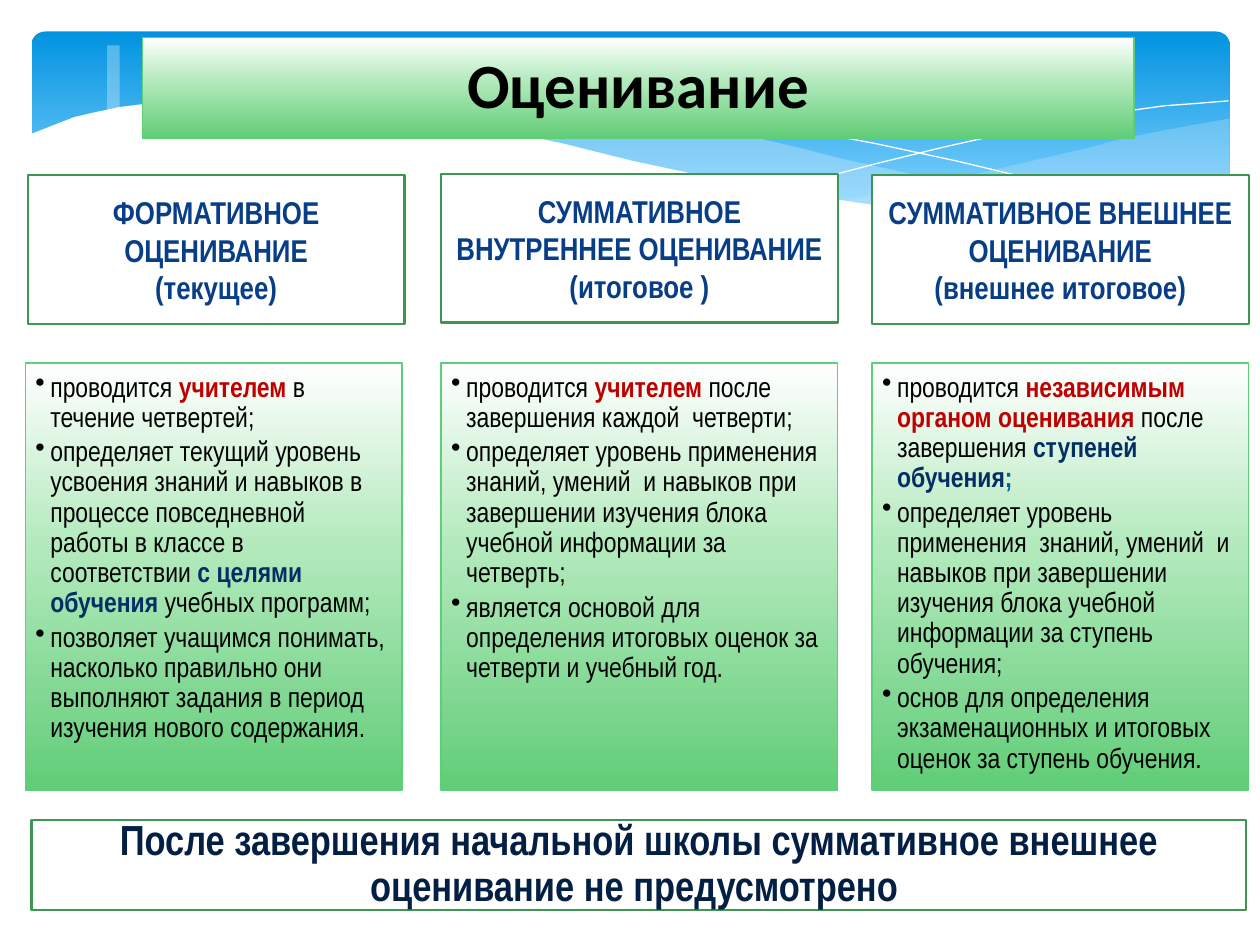
"""Build the assessment types slide."""
from lxml import etree
from pptx import Presentation
from pptx import util as u
from pptx.dml.color import RGBColor
from pptx.enum import shapes, text
from pptx.oxml.ns import qn

BLACK, RED, NAVY, TEAL = "000000", "C00000", "052E65", "016296"
GREEN, DARK_GREEN, WHITE = "5BD078", "3D9653", "FFFFFF"
GREEN_FADE = [(0, WHITE), (44, "B1E9BB"), (100, "61CD78")]
BLUE_FADE = [(0, "0293E0"), (90, "83D3FE")]
NARROW = "Arial Narrow"

TITLE = "Оценивание"
FOOTER = "После завершения начальной школы суммативное внешнее оценивание не предусмотрено "
COLUMNS = [
    {"head": ["ФОРМАТИВНОЕ ОЦЕНИВАНИЕ", "(текущее)"],
     "head_at": (0.22, 1.39), "left": 0.2, "width": 2.99,
     "points": [
         [("проводится ", BLACK), ("учителем ", RED), ("в течение четвертей;", BLACK)],
         [("определяет текущий уровень усвоения знаний и навыков в процессе "
           "повседневной работы в классе в соответствии ", BLACK),
          ("с целями обучения ", NAVY), ("учебных программ;", BLACK)],
         [("позволяет учащимся понимать, насколько правильно они выполняют "
           "задания в период изучения нового содержания.", BLACK)]]},
    {"head": ["СУММАТИВНОЕ ВНУТРЕННЕЕ ОЦЕНИВАНИЕ", "(итоговое )"],
     "head_at": (3.5, 1.38), "left": 3.5, "width": 3.15,
     "points": [
         [("проводится ", BLACK), ("учителем", RED),
          (" после завершения каждой  четверти;", BLACK)],
         [("определяет уровень применения  знаний, умений  и навыков при завершении "
           "изучения блока учебной информации за четверть;", BLACK)],
         [("является основой для определения итоговых оценок за четверти "
           "и учебный год.", BLACK)]]},
    {"head": ["СУММАТИВНОЕ ВНЕШНЕЕ ОЦЕНИВАНИЕ", "(внешнее итоговое)"],
     "head_at": (6.92, 1.39), "left": 6.92, "width": 2.99,
     "points": [
         [("проводится ", BLACK), ("независимым органом оценивания ", RED),
          ("после завершения ", BLACK), ("ступеней обучения", NAVY), (";", TEAL)],
         [("определяет уровень применения  знаний, умений  и навыков при завершении "
           "изучения блока учебной информации за ступень обучения;", BLACK)],
         [("основ для определения экзаменационных и итоговых оценок "
           "за ступень обучения.", BLACK)]]},
]

RIGHT_WAVE = [
    (9.76, 0.94), (9.48, 0.99), (9.21, 1.04), (8.91, 1.1), (8.61, 1.18), (8.05, 1.31),
    (7.53, 1.43), (7.06, 1.52), (6.61, 1.6), (6.91, 1.64), (7.19, 1.67), (7.45, 1.69),
    (7.69, 1.71), (7.92, 1.72), (8.24, 1.72), (8.54, 1.7), (8.81, 1.67), (9.05, 1.63),
    (9.28, 1.58), (9.49, 1.52), (9.63, 1.47), (9.76, 1.41)]
LEFT_WAVE = [
    (8.93, 1.67), (8.66, 1.64), (8.07, 1.54), (7.41, 1.42), (6.68, 1.26), (6.29, 1.16),
    (5.98, 1.09), (5.69, 1.02), (5.41, 0.97), (5.14, 0.92), (4.89, 0.89), (4.42, 0.83),
    (3.99, 0.8), (3.61, 0.8), (3.28, 0.81), (2.86, 0.86), (3.23, 0.9), (3.62, 0.97),
    (4.04, 1.06), (4.49, 1.16), (5.3, 1.35), (5.84, 1.46), (6.18, 1.53), (6.5, 1.58),
    (6.8, 1.63), (7.09, 1.66), (7.36, 1.69), (7.61, 1.71), (7.96, 1.73), (8.28, 1.73),
    (8.57, 1.71), (8.76, 1.69)]
FALLING_LINE = [
    (3.09, 0.9), (3.28, 0.86), (3.53, 0.84), (3.87, 0.82), (4.16, 0.81), (4.5, 0.82),
    (4.89, 0.84), (5.33, 0.88), (5.82, 0.94), (6.36, 1.03), (6.95, 1.14), (7.6, 1.28),
    (8.31, 1.45), (9.07, 1.66)]
RISING_LINE = [
    (6.13, 1.51), (6.53, 1.41), (6.95, 1.3), (7.48, 1.17), (8.06, 1.04), (8.66, 0.93),
    (8.95, 0.88), (9.24, 0.84), (9.51, 0.82), (9.75, 0.8)]
WHITE_WAVE = [
    (9.77, 1.41), (9.59, 1.48), (9.4, 1.54), (9.2, 1.59), (8.99, 1.64), (8.75, 1.67),
    (8.5, 1.7), (8.23, 1.71), (7.93, 1.71), (7.61, 1.7), (7.26, 1.67), (6.88, 1.62),
    (6.48, 1.56), (6.03, 1.49), (5.55, 1.39), (5.03, 1.28), (4.47, 1.14), (3.91, 1.02),
    (3.4, 0.92), (2.92, 0.85), (2.5, 0.81), (2.11, 0.78), (1.77, 0.78), (1.46, 0.79),
    (1.19, 0.82), (0.95, 0.85), (0.76, 0.89), (0.59, 0.93), (0.46, 0.98), (0.36, 1.02),
    (0.23, 1.07), (0.23, 2.24), (9.77, 2.24)]


def color(value):
    return RGBColor.from_string(value)


def paint(shape, fill=None, line=None, weight=0, opacity=100):
    """Set fill (hex, list of stops or None) and outline."""
    shape.shadow.inherit = False
    if fill is None:
        shape.fill.background()
    elif isinstance(fill, list):
        shape.fill.gradient()
        shape.fill.gradient_angle = 270
        stops = shape._element.spPr.find(qn("a:gradFill")).find(qn("a:gsLst"))
        stops.clear()
        for place, value in fill:
            stop = etree.SubElement(stops, qn("a:gs"), pos=str(place * 1000))
            etree.SubElement(stop, qn("a:srgbClr"), val=value)
    else:
        shape.fill.solid()
        shape.fill.fore_color.rgb = color(fill)
        if opacity < 100:
            tone = shape._element.spPr.find(qn("a:solidFill"))[0]
            etree.SubElement(tone, qn("a:alpha"), val=str(opacity * 1000))
    if line:
        shape.line.color.rgb = color(line)
        shape.line.width = u.Pt(weight)
    else:
        shape.line.fill.background()


def add_box(page, at, kind=shapes.MSO_SHAPE.RECTANGLE, **look):
    box = page.shapes.add_shape(kind, *map(u.Inches, at))
    paint(box, **look)
    return box


def add_outline(page, points, close=True, **look):
    corners = [(u.Inches(x), u.Inches(y)) for x, y in points]
    builder = page.shapes.build_freeform(*corners[0])
    builder.add_line_segments(corners[1:], close=close)
    paint(builder.convert_to_shape(), **look)


def prepare(box, insets, anchor):
    frame = box.text_frame
    frame.word_wrap = True
    frame.vertical_anchor = anchor
    (frame.margin_left, frame.margin_top,
     frame.margin_right, frame.margin_bottom) = map(u.Inches, insets)
    return frame


def write(frame, lines, size, font, align, spacing=1, after=0, bullet=False):
    """Write lines of (text, colour, bold) spans."""
    for index, spans in enumerate(lines):
        para = frame.add_paragraph() if index else frame.paragraphs[0]
        para.alignment = align
        para.line_spacing = spacing
        para.space_after = u.Pt(after)
        para.font.size = u.Pt(size)
        para.font.name = font
        if bullet:
            props = para._p.get_or_add_pPr()
            props.set("marL", str(u.Inches(0.12)))
            props.set("indent", str(-u.Inches(0.12)))
            mark = etree.Element(qn("a:buChar"), char="•")
            props.find(qn("a:defRPr")).addprevious(mark)
        for words, tone, bold in spans:
            span = para.add_run()
            span.text = words
            span.font.color.rgb = color(tone)
            span.font.bold = bold


def add_label(page, at, lines, size, font, tone, spacing=1, **look):
    box = add_box(page, at, **look)
    frame = prepare(box, (0.1, 0.06, 0.1, 0.06), text.MSO_ANCHOR.MIDDLE)
    write(frame, [[(line, tone, True)] for line in lines], size, font,
          text.PP_ALIGN.CENTER, spacing)


def main():
    deck = Presentation()
    deck.slide_width, deck.slide_height = u.Inches(10), u.Inches(7.5)
    page = deck.slides.add_slide(deck.slide_layouts[6])

    banner = add_box(page, (0.25, 0.25, 9.51, 1.56),
                     shapes.MSO_SHAPE.ROUNDED_RECTANGLE, fill=BLUE_FADE)
    banner.adjustments[0] = 0.07
    add_outline(page, RIGHT_WAVE, fill="C6E7FC", opacity=29)
    add_outline(page, LEFT_WAVE, fill="C6E7FC", opacity=40)
    for points in (FALLING_LINE, RISING_LINE):
        add_outline(page, points, close=False, line=WHITE)
    add_outline(page, WHITE_WAVE, fill=WHITE)
    add_box(page, (0.85, 0.36, 0.1, 0.71), fill=WHITE, opacity=30)

    framed = {"fill": WHITE, "line": DARK_GREEN, "weight": 1.25}
    faded = {"fill": GREEN_FADE, "line": GREEN, "weight": 0.75}
    add_label(page, (1.13, 0.3, 7.87, 0.8), [TITLE], 36, "Calibri", BLACK, 0.9, **faded)
    for column in COLUMNS:
        add_label(page, (*column["head_at"], column["width"], 1.18), column["head"],
                  18, NARROW, "073E87", **framed)
        body = add_box(page, (column["left"], 2.88, column["width"], 3.39), **faded)
        frame = prepare(body, (0.08, 0.08, 0.1, 0.11), text.MSO_ANCHOR.TOP)
        lines = [[(words, tone, tone != BLACK) for words, tone in point]
                 for point in column["points"]]
        write(frame, lines, 16, NARROW, text.PP_ALIGN.LEFT, 0.9, 2.4, bullet=True)
    add_label(page, (0.25, 6.51, 9.64, 0.71), [FOOTER], 24, NARROW, "041F44", 0.9, **framed)
    deck.save("out.pptx")


if __name__ == "__main__":
    main()
